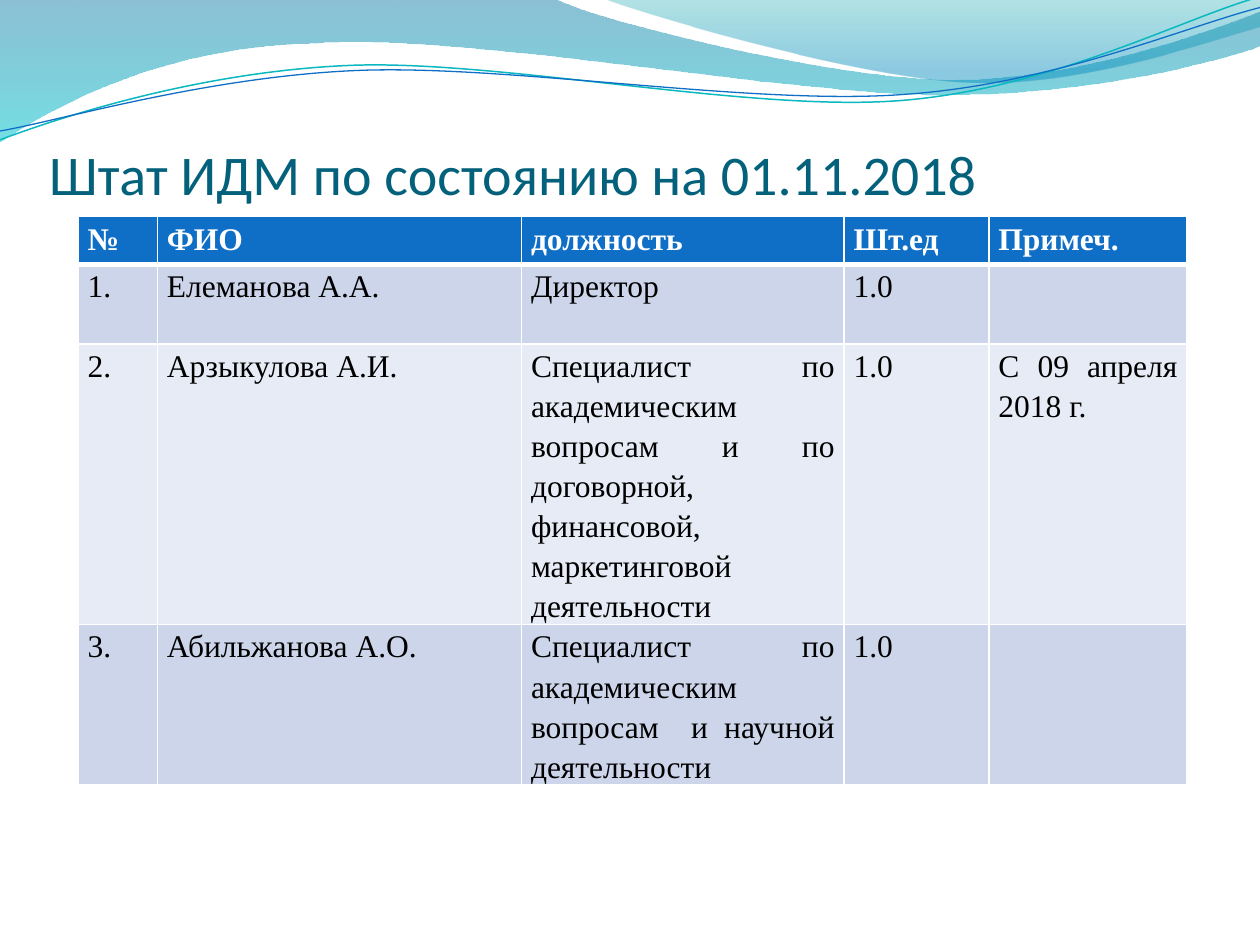
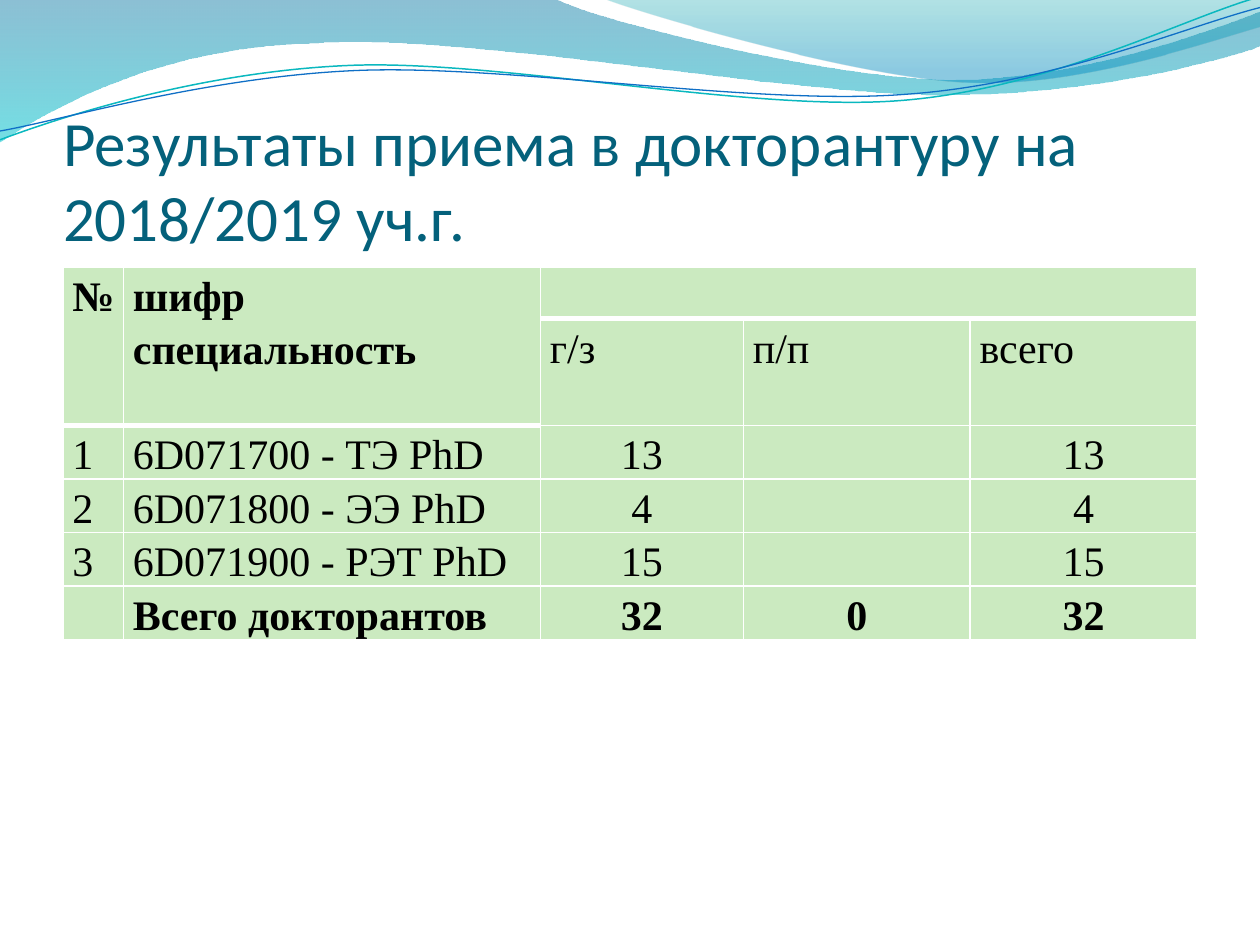
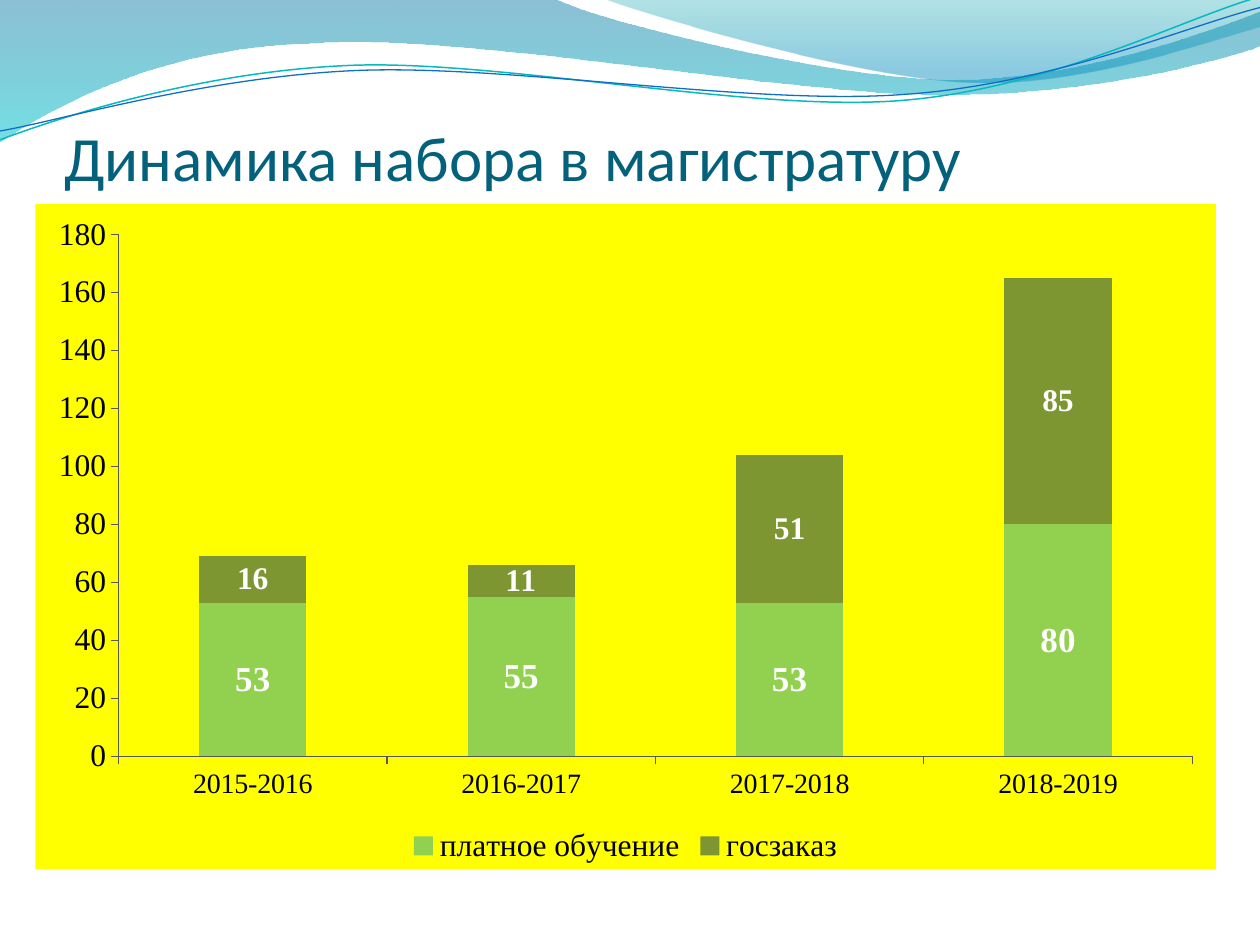
from lxml.etree import SubElement
from pptx import Presentation
from pptx.chart.data import CategoryChartData
from pptx.dml.color import RGBColor
from pptx.enum.chart import XL_CHART_TYPE, XL_LEGEND_POSITION, XL_TICK_MARK
from pptx.enum.text import MSO_ANCHOR, PP_ALIGN
from pptx.oxml import parse_xml
from pptx.oxml.ns import nsdecls, qn
from pptx.util import Inches, Pt

COLORS = {
    "title": "04617B", "text": "000000", "light": "FFFFFF",
    "header": "0F6FC6", "band_dark": "CCD5EA", "band_light": "E7EBF5",
    "green": "CBEAC0", "chart_back": "FFFF00", "axis": "595959",
    "paid": "92D050", "state": "7E9632",
    "teal_line": "0AB8BF", "blue_line": "0F6FC6",
}
TITLE_FONT, BODY_FONT, CHART_FONT = "Calibri", "Times New Roman", "TeX Gyre Pagella"
SLIDE_W, SLIDE_H = 10, 7.5
TITLE_SIZE = (9, 1.25)
CELL_MARGIN = Pt(5.4)
HEADER_BORDERS = {"lnL": 1, "lnR": 1, "lnT": 1, "lnB": 3}

# Outlines in inches: a pair is a straight step, six numbers are a Bezier curve.
# Gradient stops: position, colour, opacity in percent.
WAVES = [
    {"outline": [(0, 0), (4.4, -0.01), (4.76, 0.17, 6.64, 0.63, 7.58, 0.63),
                 (8.53, 0.63, 9.58, 0.26, 10, 0.09), (10.01, 0.36),
                 (9.83, 0.44, 8.7, 0.76, 7.46, 0.75), (6.22, 0.75, 3.82, 0.28, 2.57, 0.34),
                 (1.29, 0.36, 0.46, 0.83, -0.01, 1.13), (0, 0)],
     "gradient": [(0, "0074A1", 45), (1, "00C6CF", 55)]},
    {"outline": [(4.79, -0.01), (5.09, 0.11, 6.82, 0.62, 7.69, 0.65),
                 (8.56, 0.69, 9.61, 0.32, 10, 0.21), (10, 0), (4.79, -0.01)],
     "gradient": [(0, "00A1A9", 30), (0.8, "008BBF", 45)]},
    {"outline": [(0, 1.11), (0.48, 0.93, 1.58, 0.57, 2.77, 0.52),
                 (3.95, 0.47, 5.93, 0.89, 7.13, 0.8), (8.33, 0.71, 9.38, 0.15, 9.98, -0.02)],
     "line": ("teal_line", 0.85)},
    {"outline": [(0, 1.04), (0.47, 0.96, 1.64, 0.61, 2.83, 0.56),
                 (4.03, 0.51, 5.97, 0.84, 7.17, 0.75), (8.36, 0.67, 9.41, 0.21, 10, 0.06)],
     "line": ("blue_line", 0.75)},
]

STAFF = {
    "title": ("Штат ИДМ по состоянию на 01.11.2018", 0.39, 0.39, 32),
    "at": (0.62, 1.72),
    "columns": [0.63, 2.89, 2.56, 1.15, 1.57],
    "heights": [0.38, 0.63, 1.6, 0.95],
    "size": 18,
    "rows": [
        ("№", "ФИО", "должность", "Шт.ед", "Примеч."),
        ("1.", "Елеманова А.А.", "Директор", "1.0", ""),
        ("2.", "Арзыкулова А.И.",
         "Специалист по академическим вопросам и по договорной, финансовой, "
         "маркетинговой  деятельности", "1.0", "С 09 апреля 2018 г."),
        ("3.", "Абильжанова А.О.",
         "Специалист  по академическим вопросам  и научной деятельности", "1.0", ""),
    ],
    "merges": [],
}
ADMISSION = {
    "title": ("Результаты приема в докторантуру на 2018/2019 уч.г.", 0.5, 0.77, 36),
    "at": (0.5, 2.12),
    "columns": [0.48, 3.31, 1.61, 1.8, 1.8],
    "heights": [0.41] * 6,
    "size": 24,
    "rows": [
        ("№", "шифр\nспециальность", "", "", ""),
        ("", "", "г/з", "п/п", "всего"),
        ("1", "6D071700 - ТЭ PhD", "13", "", "13"),
        ("2", "6D071800 - ЭЭ PhD", "4", "", "4"),
        ("3", "6D071900 - РЭТ PhD", "15", "", "15"),
        ("", "Всего докторантов", "32", "0", "32"),
    ],
    "merges": [((0, 0), (1, 0)), ((0, 1), (1, 1)), ((0, 2), (0, 4))],
}
ENROLMENT = {
    "title": ("Динамика набора в магистратуру", 0.51, 0.29, 36),
    "at": (0.28, 1.62, 9.37, 5.28),
    "years": ["2015-2016", "2016-2017", "2017-2018", "2018-2019"],
    "series": [("платное обучение", [53, 55, 53, 80], "paid", 20),
               ("госзаказ", [16, 11, 51, 85], "state", 18)],
}


def rgb(name):
    return RGBColor.from_string(COLORS[name])


def set_font(font, size, color="text", face=BODY_FONT, bold=False):
    font.size, font.name, font.bold = Pt(size), face, bold
    font.color.rgb = rgb(color)


def build_outline(shapes, outline, closed):
    """Build the outline with straight steps, then bend each triple into its curve."""
    start, *points = [(Inches(step[i]), Inches(step[i + 1]))
                      for step in outline for i in range(0, len(step), 2)]
    builder = shapes.build_freeform(*start)
    builder.add_line_segments(points, close=closed)
    wave = builder.convert_to_shape()
    straight = iter(list(wave.element.iter(qn("a:lnTo"))))
    for step in outline[1:]:
        first = next(straight)
        if len(step) == 2:
            continue
        curve = parse_xml(f'<a:cubicBezTo {nsdecls("a")}/>')
        first.addprevious(curve)
        for part in (first, next(straight), next(straight)):
            curve.append(part[0])
            part.getparent().remove(part)
    return wave


def draw_wave(shapes, outline, gradient=None, line=None):
    wave = build_outline(shapes, outline, closed=gradient is not None)
    wave.shadow.inherit = False
    if line:
        color, width = line
        wave.fill.background()
        wave.line.color.rgb, wave.line.width = rgb(color), Pt(width)
        return wave
    wave.line.fill.background()
    wave.fill.gradient()
    wave.fill.gradient_angle = 270
    for stop, (position, color, _) in zip(wave.fill.gradient_stops, gradient):
        stop.position, stop.color.rgb = position, RGBColor.from_string(color)
    for color_tag, (_, _, opacity) in zip(wave.element.iter(qn("a:srgbClr")), gradient):
        SubElement(color_tag, qn("a:alpha"), val=str(opacity * 1000))
    return wave


def decorate_layout(layout, slide):
    """Draw the waves on the slide and move them behind everything on its layout."""
    for depth, wave in enumerate(WAVES, start=2):
        layout.shapes.element.insert(depth, draw_wave(slide.shapes, **wave).element)


def add_title(slide, text, left, top, size):
    title = slide.shapes.title
    title.left, title.top = Inches(left), Inches(top)
    title.width, title.height = map(Inches, TITLE_SIZE)
    frame = title.text_frame
    frame.text = text
    frame.word_wrap, frame.vertical_anchor = True, MSO_ANCHOR.BOTTOM
    frame.margin_left = frame.margin_right = frame.margin_bottom = 0
    frame.margin_top = Inches(0.05)
    frame.paragraphs[0].alignment = PP_ALIGN.LEFT
    set_font(frame.paragraphs[0].font, size, "title", TITLE_FONT)


def staff_style(row, column):
    """Return fill, text colour, bold, alignment and anchor of a staff cell."""
    if row == 0:
        return "header", "light", True, PP_ALIGN.JUSTIFY, MSO_ANCHOR.TOP
    band = "band_dark" if row % 2 else "band_light"
    return band, "text", False, PP_ALIGN.JUSTIFY, MSO_ANCHOR.TOP


def admission_style(row, column):
    """Return fill, text colour, bold, alignment and anchor of an admission cell."""
    total = len(ADMISSION["rows"]) - 1
    if row < 2 or column == 0:
        align = PP_ALIGN.JUSTIFY
    else:
        align = PP_ALIGN.LEFT if column == 1 else PP_ALIGN.CENTER
    if row < 2:
        anchor = MSO_ANCHOR.TOP
    else:
        anchor = MSO_ANCHOR.MIDDLE if row == total else MSO_ANCHOR.BOTTOM
    return "green", "text", row in (0, total), align, anchor


def add_header_borders(cell):
    properties = cell.fill and cell.text_frame and cell.text_frame._txBody.getnext()
    for position, (side, width) in enumerate(HEADER_BORDERS.items()):
        properties.insert(position, parse_xml(
            f'<a:{side} {nsdecls("a")} w="{Pt(width)}"><a:solidFill>'
            f'<a:srgbClr val="{COLORS["light"]}"/></a:solidFill></a:{side}>'))


def add_grid(slide, content, style):
    columns, heights = content["columns"], content["heights"]
    box = map(Inches, (*content["at"], sum(columns), sum(heights)))
    frame = slide.shapes.add_table(len(heights), len(columns), *box)
    table = frame.table
    for column, width in zip(table.columns, columns):
        column.width = Inches(width)
    for row, height in zip(table.rows, heights):
        row.height = Inches(height)
    for r, texts in enumerate(content["rows"]):
        for c, text in enumerate(texts):
            fill, color, bold, align, anchor = style(r, c)
            cell = table.cell(r, c)
            cell.text, cell.vertical_anchor = text, anchor
            cell.margin_left = cell.margin_right = CELL_MARGIN
            cell.margin_top = cell.margin_bottom = 0
            cell.fill.solid()
            cell.fill.fore_color.rgb = rgb(fill)
            if r == 0:
                add_header_borders(cell)
            for paragraph in cell.text_frame.paragraphs:
                paragraph.alignment, paragraph.line_spacing = align, 1.15
                set_font(paragraph.font, content["size"], color, bold=bold)
    for first, last in content["merges"]:
        table.cell(*first).merge(table.cell(*last))


def add_enrolment_chart(slide):
    data = CategoryChartData()
    data.categories = ENROLMENT["years"]
    for name, values, _, _ in ENROLMENT["series"]:
        data.add_series(name, values)
    chart = slide.shapes.add_chart(
        XL_CHART_TYPE.COLUMN_STACKED, *map(Inches, ENROLMENT["at"]), data).chart
    set_font(chart.font, 10, face=CHART_FONT)
    chart.has_title = False
    chart.element.find(qn("c:chart")).addnext(parse_xml(
        f'<c:spPr {nsdecls("c", "a")}><a:solidFill><a:srgbClr val="{COLORS["chart_back"]}"/>'
        '</a:solidFill><a:ln><a:noFill/></a:ln></c:spPr>'))

    for axis, size in ((chart.category_axis, 16), (chart.value_axis, 18)):
        axis.has_major_gridlines = False
        axis.major_tick_mark = XL_TICK_MARK.OUTSIDE
        axis.format.line.color.rgb = rgb("axis")
        axis.format.line.width = Pt(0.75)
        set_font(axis.tick_labels.font, size)

    chart.has_legend = True
    chart.legend.position = XL_LEGEND_POSITION.BOTTOM
    chart.legend.include_in_layout = False
    set_font(chart.legend.font, 18)

    plot = chart.plots[0]
    plot.gap_width, plot.overlap, plot.vary_by_categories = 150, 100, False
    for series, (_, _, color, size) in zip(plot.series, ENROLMENT["series"]):
        series.format.fill.solid()
        series.format.fill.fore_color.rgb = rgb(color)
        series.data_labels.show_value = True
        set_font(series.data_labels.font, size, "light", bold=True)


def main():
    deck = Presentation()
    deck.slide_width, deck.slide_height = Inches(SLIDE_W), Inches(SLIDE_H)
    layout = deck.slide_layouts[5]
    slides = []
    for content in (STAFF, ADMISSION, ENROLMENT):
        slide = deck.slides.add_slide(layout)
        add_title(slide, *content["title"])
        slides.append(slide)
    staff, admission, enrolment = slides
    decorate_layout(layout, staff)
    add_grid(staff, STAFF, staff_style)
    add_grid(admission, ADMISSION, admission_style)
    add_enrolment_chart(enrolment)
    deck.save("out.pptx")


if __name__ == "__main__":
    main()
